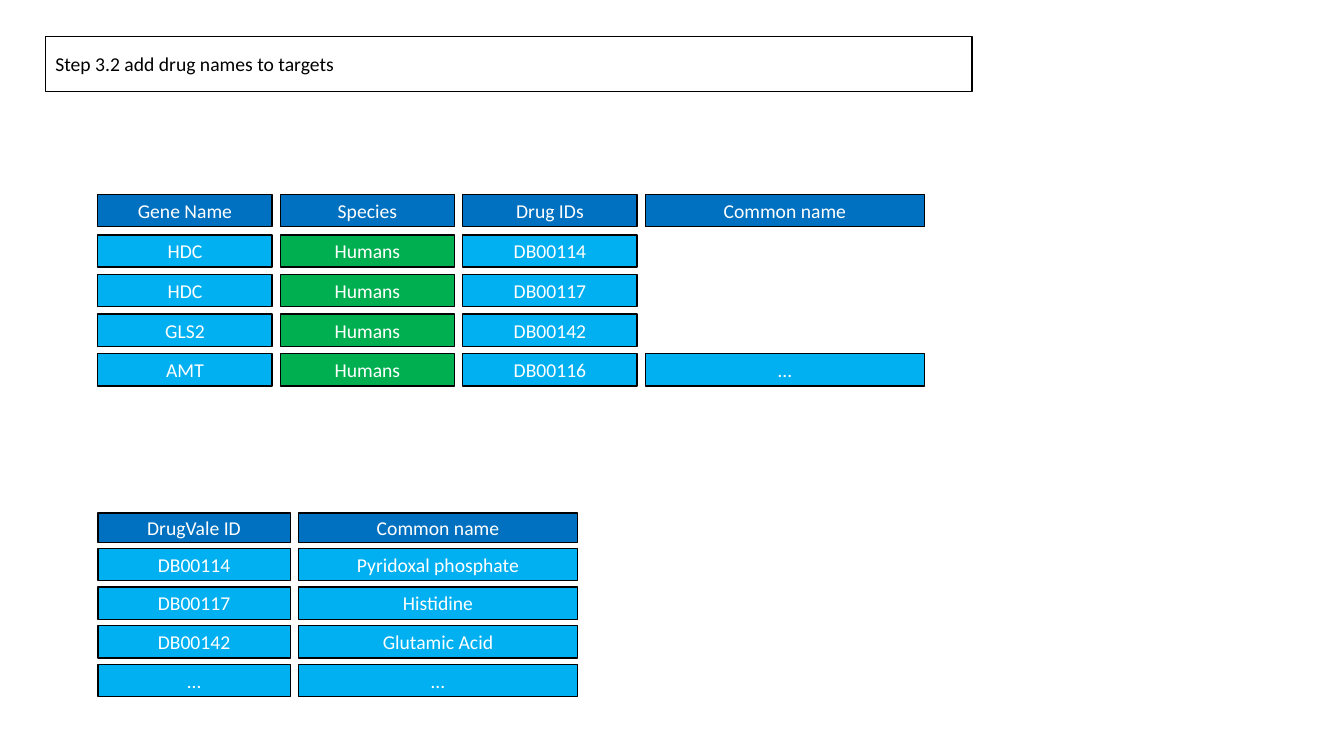
from pptx import Presentation
from pptx.dml.color import RGBColor
from pptx.enum.shapes import MSO_SHAPE
from pptx.enum.text import MSO_ANCHOR, PP_ALIGN
from pptx.util import Inches, Pt

RECT = MSO_SHAPE.RECTANGLE
MIDDLE = MSO_ANCHOR.MIDDLE
LEFT, CENTER = PP_ALIGN.LEFT, PP_ALIGN.CENTER

COLORS = {
    "header": "0070C0",
    "cell": "00B0F0",
    "species": "00B050",
    "black": "000000",
    "white": "FFFFFF",
}

TITLE = "Step 3.2 add drug names to targets"

TARGETS = {
    "headers": ["Gene Name", "Species", "Drug IDs", "Common name"],
    "rows": [
        ["HDC", "Humans", "DB00114", None],
        ["HDC", "Humans", "DB00117", None],
        ["GLS2", "Humans", "DB00142", None],
        ["AMT", "Humans", "DB00116", "…"],
    ],
    "widths": [1.73, 1.73, 1.73, 2.77],
    "header_top": 1.93,
    "header_height": 0.32,
    "first_top": 2.33,
    "last_top": 3.51,
    "fills": ["cell", "species", "cell", "cell"],
}

DRUGS = {
    "headers": ["DrugVale ID", "Common name"],
    "rows": [
        ["DB00114", "Pyridoxal phosphate"],
        ["DB00117", "Histidine"],
        ["DB00142", "Glutamic Acid"],
        ["…", "…"],
    ],
    "widths": [1.91, 2.77],
    "header_top": 5.09,
    "header_height": 0.29,
    "first_top": 5.44,
    "last_top": 6.59,
    "fills": ["cell", "cell"],
}

GRID_LEFT = 0.97
COLUMN_GAP = 0.08
ROW_HEIGHT = 0.32


def rgb(name):
    return RGBColor.from_string(COLORS[name])


def add_box(s, text, left, top, width, height, fill=None, color="white", align=CENTER):
    sp = s.shapes.add_shape(RECT, Inches(left), Inches(top), Inches(width), Inches(height))
    sp.shadow.inherit = False
    if fill:
        sp.fill.solid()
        sp.fill.fore_color.rgb = rgb(fill)
    else:
        sp.fill.background()
    sp.line.color.rgb = rgb("black")
    sp.line.width = Pt(1)
    tf = sp.text_frame
    tf.word_wrap = True
    tf.vertical_anchor = MIDDLE
    p = tf.paragraphs[0]
    p.alignment = align
    r = p.add_run()
    r.text = text
    r.font.name = "Calibri"
    r.font.size = Pt(14)
    r.font.color.rgb = rgb(color)


def add_grid(s, grid):
    pitch = (grid["last_top"] - grid["first_top"]) / (len(grid["rows"]) - 1)
    left = GRID_LEFT
    for col, (header, width, fill) in enumerate(zip(grid["headers"], grid["widths"], grid["fills"])):
        add_box(s, header, left, grid["header_top"], width, grid["header_height"], fill="header")
        for i, row in enumerate(grid["rows"]):
            if row[col]:
                add_box(s, row[col], left, grid["first_top"] + i * pitch, width, ROW_HEIGHT, fill=fill)
        left += width + COLUMN_GAP


def main():
    prs = Presentation()
    prs.slide_width = Inches(13.33)
    prs.slide_height = Inches(7.5)
    s = prs.slides.add_slide(prs.slide_layouts[6])
    add_box(s, TITLE, 0.45, 0.36, 9.19, 0.55, color="black", align=LEFT)
    for grid in (TARGETS, DRUGS):
        add_grid(s, grid)
    prs.save("out.pptx")


if __name__ == "__main__":
    main()
